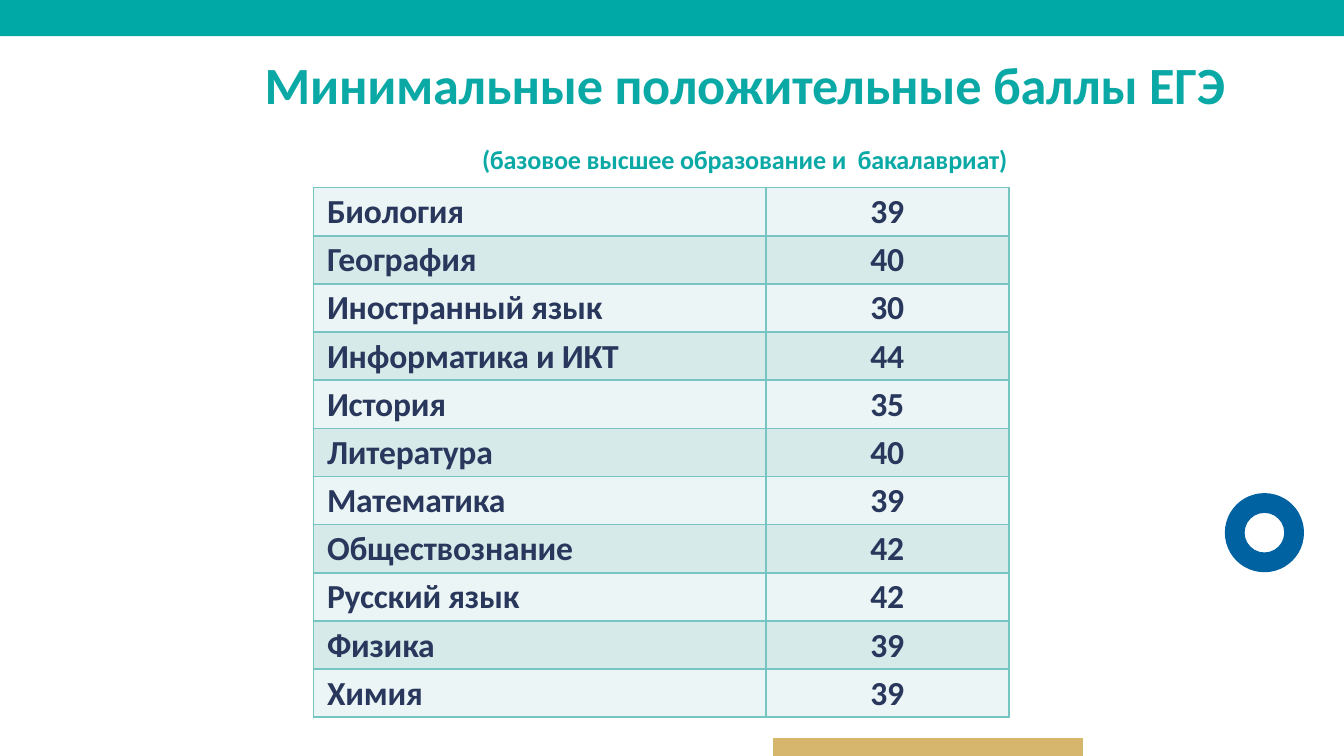
from dataclasses import dataclass

from lxml.etree import SubElement
from pptx import Presentation
from pptx.dml.color import RGBColor
from pptx.enum.shapes import MSO_SHAPE
from pptx.enum.text import PP_ALIGN
from pptx.oxml.ns import qn
from pptx.util import Pt


@dataclass(frozen=True)
class Theme:
    font: str = "Calibri"
    teal: str = "00A9A6"
    title: str = "0AA9A6"
    sand: str = "D6B56C"
    blue: str = "0062A1"
    text: str = "28375B"
    border: str = "77C5C3"
    bands: tuple = ("EBF5F5", "D5EAE9")
    title_size: float = 28
    subtitle_size: float = 14
    table_size: float = 18


THEME = Theme()
TITLE = "Минимальные положительные баллы ЕГЭ"
SUBTITLE = "(базовое высшее образование и  бакалавриат)"
SCORES = [
    ("Биология", 39),
    ("География", 40),
    ("Иностранный язык", 30),
    ("Информатика и ИКТ", 44),
    ("История", 35),
    ("Литература", 40),
    ("Математика", 39),
    ("Обществознание", 42),
    ("Русский язык", 42),
    ("Физика", 39),
    ("Химия", 39),
]


def add_plain_shape(slide, kind, left, top, width, height, color):
    s = slide.shapes.add_shape(kind, Pt(left), Pt(top), Pt(width), Pt(height))
    s.shadow.inherit = False
    s.fill.solid()
    s.fill.fore_color.rgb = RGBColor.from_string(color)
    s.line.fill.background()
    return s


def style_font(font, color):
    font.name = THEME.font
    font.bold = True
    font.color.rgb = RGBColor.from_string(color)


def add_run(p, text):
    """Add a run that is tightened by a tenth of a point."""
    r = p.add_run()
    r.text = text
    r.font._element.set("spc", "-10")
    return r


def add_title(slide):
    s = slide.shapes.add_textbox(Pt(131.8), Pt(28.8), Pt(534.2), Pt(93.6))
    tf = s.text_frame
    tf.word_wrap = True
    tf.margin_left = tf.margin_right = tf.margin_bottom = 0
    tf.margin_top = Pt(1)
    p = tf.paragraphs[0]
    p.alignment = PP_ALIGN.CENTER
    p.line_spacing = Pt(31.9)
    style_font(p.font, THEME.title)
    add_run(p, TITLE).font.size = Pt(THEME.title_size)
    p.add_line_break()
    add_run(p, SUBTITLE).font.size = Pt(THEME.subtitle_size)


def add_borders(cell):
    tc_pr = cell._tc.get_or_add_tcPr()
    for i, side in enumerate(("a:lnL", "a:lnR", "a:lnT", "a:lnB")):
        ln = tc_pr.makeelement(qn(side), {"w": str(Pt(1))})
        fill = SubElement(ln, qn("a:solidFill"))
        SubElement(fill, qn("a:srgbClr"), val=THEME.border)
        tc_pr.insert(i, ln)


def fill_cell(cell, text, band, centered):
    cell.fill.solid()
    cell.fill.fore_color.rgb = RGBColor.from_string(band)
    add_borders(cell)
    cell.margin_left = cell.margin_right = cell.margin_bottom = 0
    cell.margin_top = Pt(2.2)
    p = cell.text_frame.paragraphs[0]
    if centered:
        p.alignment = PP_ALIGN.CENTER
    else:
        p._p.get_or_add_pPr().set("marL", str(Pt(7.2)))
    style_font(p.font, THEME.text)
    p.font.size = Pt(THEME.table_size)
    add_run(p, text).font.size = Pt(THEME.table_size)


def add_score_table(slide):
    widths, row_height = (242.2, 130.2), 25.8
    frame = slide.shapes.add_table(
        len(SCORES), len(widths), Pt(168), Pt(100.5),
        Pt(sum(widths)), Pt(row_height * len(SCORES)))
    table = frame.table
    table.first_row = table.horz_banding = False
    for column, width in zip(table.columns, widths):
        column.width = Pt(width)
    for i, (subject, score) in enumerate(SCORES):
        table.rows[i].height = Pt(row_height)
        band = THEME.bands[i % 2]
        fill_cell(table.cell(i, 0), subject, band, centered=False)
        fill_cell(table.cell(i, 1), str(score), band, centered=True)


def main():
    prs = Presentation()
    prs.slide_width, prs.slide_height = Pt(720), Pt(405)
    slide = prs.slides.add_slide(prs.slide_layouts[6])
    add_plain_shape(slide, MSO_SHAPE.RECTANGLE, 0, 0, 720, 19.4, THEME.teal)
    add_plain_shape(slide, MSO_SHAPE.RECTANGLE, 414.2, 395.4, 166, 9.6, THEME.sand)
    ring = add_plain_shape(slide, MSO_SHAPE.DONUT, 656.2, 264.2, 42.4, 42.4, THEME.blue)
    ring.adjustments[0] = 0.25
    add_title(slide)
    add_score_table(slide)
    prs.save("out.pptx")


if __name__ == "__main__":
    main()
